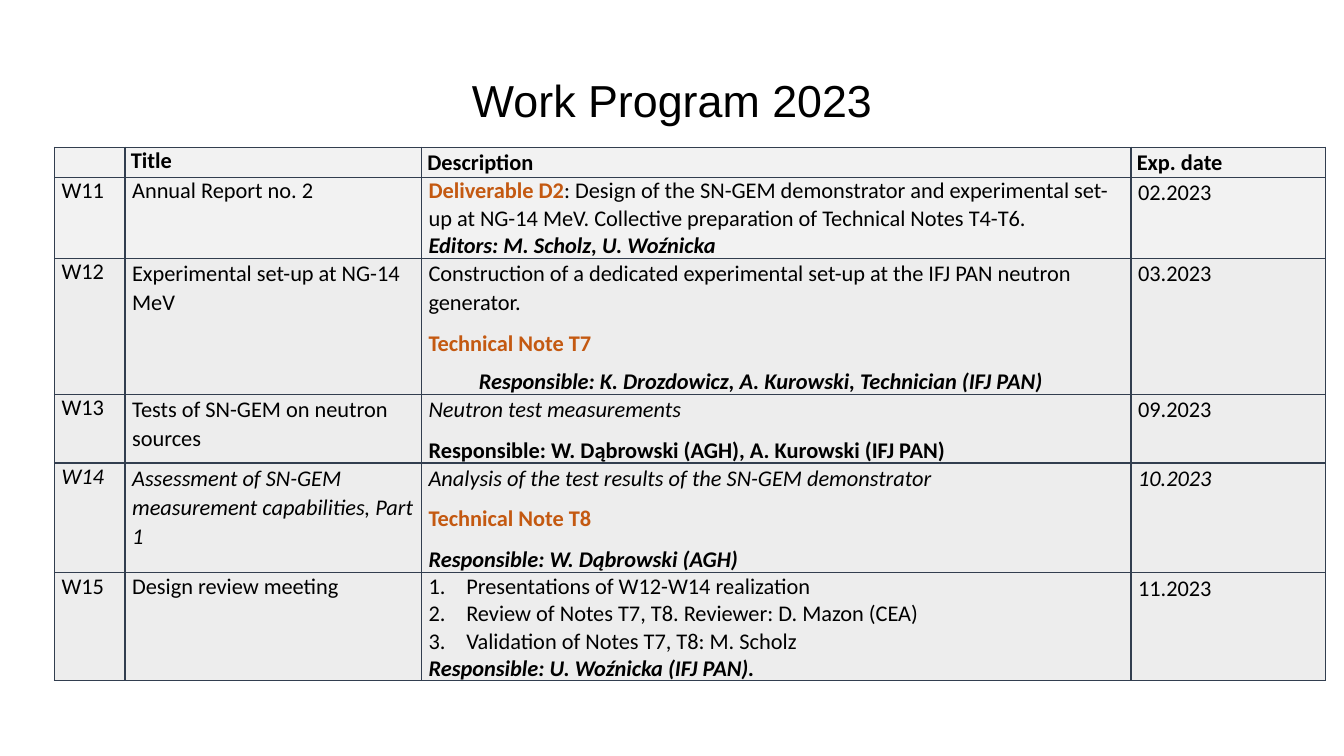
import pptx
import pptx.dml.color
import pptx.enum.text
import pptx.oxml
import pptx.oxml.ns
import pptx.util
from pptx.util import Cm

COLORS = {
    "text": "000000",
    "accent": "C45911",
    "border": "323E4F",
    "light": "F2F2F2",
    "grey": "EDEDED",
}
COLUMN_WIDTHS = [1.78, 7.47, 17.88, 4.9]
ROW_HEIGHTS = [0.72, 2.03, 3.43, 1.73, 2.77, 2.72]


def tight(*runs):
    return "tight", runs


def loose(*runs):
    return "loose", runs


def indented(*runs):
    return "indented", runs


def numbered(*runs):
    return "numbered", runs


# Each run is (text, style): b = bold, i = italic, a = accent colour.
HEADER = [
    [tight(("", ""))],
    [tight(("Title", "b"))],
    [loose(("Description", "b"))],
    [loose(("Exp. date", "b"))],
]
WORK_ITEMS = [
    [
        [tight(("W11", ""))],
        [tight(("Annual Report no. 2", ""))],
        [
            tight(
                ("Deliverable D2", "ba"),
                (": Design of the SN-GEM demonstrator and experimental set-up at "
                 "NG-14 MeV. Collective preparation of Technical Notes T4-T6.", ""),
            ),
            tight(("Editors: M. Scholz, U. Woźnicka", "bi")),
        ],
        [loose(("02.2023", ""))],
    ],
    [
        [tight(("W12", ""))],
        [loose(("Experimental set-up at NG-14 MeV", ""))],
        [
            loose(("Construction of a dedicated experimental set-up at the "
                   "IFJ PAN neutron generator.", "")),
            loose(("Technical Note T7", "ba")),
            indented(("Responsible: K. Drozdowicz, A. Kurowski, "
                      "Technician (IFJ PAN)", "bi")),
        ],
        [loose(("03.2023", ""))],
    ],
    [
        [tight(("W13", ""))],
        [loose(("Tests of SN-GEM on neutron sources", ""))],
        [
            loose(("Neutron test measurements", "i")),
            loose(("Responsible: W. Dąbrowski (AGH), A. Kurowski (IFJ PAN)", "b")),
        ],
        [loose(("09.2023", ""))],
    ],
    [
        [tight(("W14", "i"))],
        [loose(("Assessment of SN-GEM measurement capabilities, Part 1", "i"))],
        [
            loose(("Analysis of the test results of the SN-GEM demonstrator", "i")),
            loose(("Technical Note T8", "ba")),
            loose(("Responsible: W. Dąbrowski (AGH)", "bi")),
        ],
        [loose(("10.2023", "i"))],
    ],
    [
        [tight(("W15", ""))],
        [tight(("Design review meeting", ""))],
        [
            numbered(("Presentations of W12-W14 realization", "")),
            numbered(("Review of Notes T7, T8. Reviewer: D. Mazon (CEA)", "")),
            numbered(("Validation of Notes T7, T8: M. Scholz", "")),
            tight(("Responsible: U. Woźnicka (IFJ PAN).", "bi")),
        ],
        [loose(("11.2023", ""))],
    ],
]


def rgb(name):
    return pptx.dml.color.RGBColor.from_string(COLORS[name])


def add_run(paragraph, text, size, font, style=""):
    run = paragraph.add_run()
    run.text = text
    run.font.size = pptx.util.Pt(size)
    run.font.name = font
    run.font.bold = "b" in style
    run.font.italic = "i" in style
    run.font.color.rgb = rgb("accent" if "a" in style else "text")


def format_paragraph(paragraph, kind):
    """Apply the spacing, indent or numbering of a paragraph kind."""
    if kind == "loose":
        paragraph.line_spacing = 1.07
        paragraph.space_after = pptx.util.Pt(8)
    elif kind == "indented":
        paragraph._p.get_or_add_pPr().set("marL", str(Cm(1.27)))
    elif kind == "numbered":
        properties = paragraph._p.get_or_add_pPr()
        properties.set("marL", str(Cm(0.95)))
        properties.set("indent", str(-Cm(0.95)))
        properties.append(pptx.oxml.parse_xml(
            f'<a:buAutoNum {pptx.oxml.ns.nsdecls("a")} type="arabicPeriod"/>'))


def add_borders(cell):
    for side in ("lnL", "lnR", "lnT", "lnB"):
        cell._tc.get_or_add_tcPr().append(pptx.oxml.parse_xml(
            f'<a:{side} {pptx.oxml.ns.nsdecls("a")} w="12700"><a:solidFill>'
            f'<a:srgbClr val="{COLORS["border"]}"/></a:solidFill></a:{side}>'))


def fill_cell(cell, paragraphs, fill, side_margin):
    add_borders(cell)
    cell.fill.solid()
    cell.fill.fore_color.rgb = rgb(fill)
    cell.margin_left = cell.margin_right = Cm(side_margin)
    cell.margin_top = cell.margin_bottom = 0
    frame = cell.text_frame
    for index, (kind, runs) in enumerate(paragraphs):
        paragraph = frame.add_paragraph() if index else frame.paragraphs[0]
        format_paragraph(paragraph, kind)
        for text, style in runs:
            add_run(paragraph, text, 16, "Calibri", style)


def add_title(slide, text):
    title = slide.shapes.title
    title.left, title.top = Cm(5.51), Cm(1.7)
    title.width, title.height = Cm(22.86), Cm(1.6)
    title.text_frame.auto_size = pptx.enum.text.MSO_AUTO_SIZE.SHAPE_TO_FIT_TEXT
    paragraph = title.text_frame.paragraphs[0]
    paragraph.alignment = pptx.enum.text.PP_ALIGN.CENTER
    add_run(paragraph, text, 32, "Arial")


def add_work_table(slide):
    frame = slide.shapes.add_table(
        len(ROW_HEIGHTS), len(COLUMN_WIDTHS), Cm(1.37), Cm(3.71),
        Cm(sum(COLUMN_WIDTHS)), Cm(sum(ROW_HEIGHTS)))
    table = frame.table
    table.horz_banding = False
    for column, width in zip(table.columns, COLUMN_WIDTHS):
        column.width = Cm(width)
    for row_index, contents in enumerate([HEADER] + WORK_ITEMS):
        row = table.rows[row_index]
        row.height = Cm(ROW_HEIGHTS[row_index])
        fill = "light" if row_index < 2 else "grey"
        side_margin = 0.18 if row_index else 0.15
        for cell, paragraphs in zip(row.cells, contents):
            fill_cell(cell, paragraphs, fill, side_margin)


def main():
    deck = pptx.Presentation()
    deck.slide_width, deck.slide_height = Cm(33.87), Cm(19.05)
    slide = deck.slides.add_slide(deck.slide_layouts.get_by_name("Title Only"))
    add_title(slide, "Work Program 2023")
    add_work_table(slide)
    deck.save("out.pptx")


if __name__ == "__main__":
    main()
